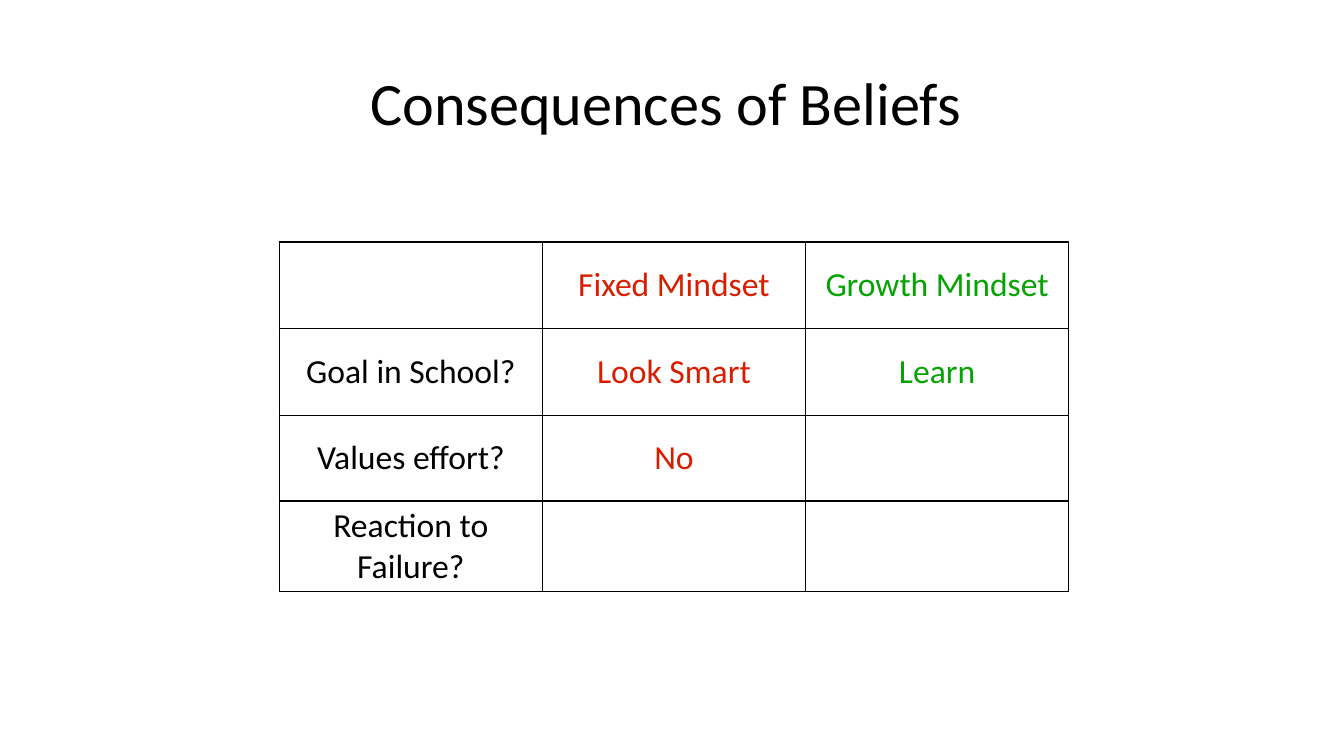
"""Build the slide comparing the consequences of fixed and growth mindset beliefs."""
from dataclasses import dataclass

from lxml import etree
from pptx import Presentation
from pptx import util as u
from pptx.dml.color import RGBColor
from pptx.enum import text
from pptx.oxml import ns


@dataclass(frozen=True)
class Theme:
    """Colours, font and type sizes of the slide."""
    font: str = "Calibri"
    ink: str = "000000"
    fixed: str = "D81E00"
    growth: str = "07A203"
    title_size: float = 43
    cell_size: float = 24
    border_width: float = 1


@dataclass(frozen=True)
class Belief:
    """One table row: a question with its two mindset answers."""
    question: str
    fixed: str
    growth: str
    height: float


THEME = Theme()
COLUMN_COLOURS = (THEME.ink, THEME.fixed, THEME.growth)
COLUMN_WIDTH = 2.61
BELIEFS = (
    Belief("", "Fixed Mindset", "Growth Mindset", 0.86),
    Belief("Goal in School?", "Look Smart", "Learn", 0.86),
    Belief("Values effort?", "No", "", 0.85),
    Belief("Reaction to Failure?", "", "", 0.89),
)


def write_text(frame, content: str, *, size: float, colour: str, margin: float) -> None:
    """Write one centred, formatted paragraph into a text frame."""
    frame.word_wrap = True
    frame.margin_left = frame.margin_right = u.Inches(margin)
    frame.margin_top = frame.margin_bottom = u.Inches(margin)
    para = frame.paragraphs[0]
    para.alignment = text.PP_ALIGN.CENTER
    para.font.size = u.Pt(size)
    if content:
        span = para.add_run()
        span.text = content
        span.font.name = THEME.font
        span.font.size = u.Pt(size)
        span.font.color.rgb = RGBColor.from_string(colour)


def add_borders(cell) -> None:
    """Draw a thin line on all four sides of a cell."""
    properties = cell._tc.get_or_add_tcPr()
    for position, side in enumerate(("lnL", "lnR", "lnT", "lnB")):
        line = etree.Element(ns.qn(f"a:{side}"), w=str(u.Pt(THEME.border_width)))
        fill = etree.SubElement(line, ns.qn("a:solidFill"))
        etree.SubElement(fill, ns.qn("a:srgbClr"), val=THEME.ink)
        properties.insert(position, line)


def add_title(page, content: str) -> None:
    """Place the slide title."""
    box = page.shapes.add_textbox(
        u.Inches(2.34), u.Inches(0.07), u.Inches(8.52), u.Inches(1.88))
    box.text_frame.vertical_anchor = text.MSO_ANCHOR.MIDDLE
    write_text(box.text_frame, content, size=THEME.title_size, colour=THEME.ink, margin=0)


def add_belief_table(page, beliefs: tuple[Belief, ...]) -> None:
    """Place the table with one row for each belief."""
    columns = len(COLUMN_COLOURS)
    table = page.shapes.add_table(
        len(beliefs), columns, u.Inches(2.77), u.Inches(2.4),
        u.Inches(columns * COLUMN_WIDTH),
        u.Inches(sum(belief.height for belief in beliefs))).table
    table.first_row = table.horz_banding = False
    for column in table.columns:
        column.width = u.Inches(COLUMN_WIDTH)
    for row, belief in zip(table.rows, beliefs):
        row.height = u.Inches(belief.height)
        answers = (belief.question, belief.fixed, belief.growth)
        for cell, content, colour in zip(row.cells, answers, COLUMN_COLOURS):
            cell.fill.background()
            cell.vertical_anchor = text.MSO_ANCHOR.MIDDLE
            write_text(cell.text_frame, content,
                       size=THEME.cell_size, colour=colour, margin=0.04)
            add_borders(cell)


def main() -> None:
    """Create and save the deck."""
    deck = Presentation()
    deck.slide_width, deck.slide_height = u.Inches(13.33), u.Inches(7.5)
    page = deck.slides.add_slide(deck.slide_layouts[6])
    add_title(page, "Consequences of Beliefs")
    add_belief_table(page, BELIEFS)
    deck.save("out.pptx")


if __name__ == "__main__":
    main()
